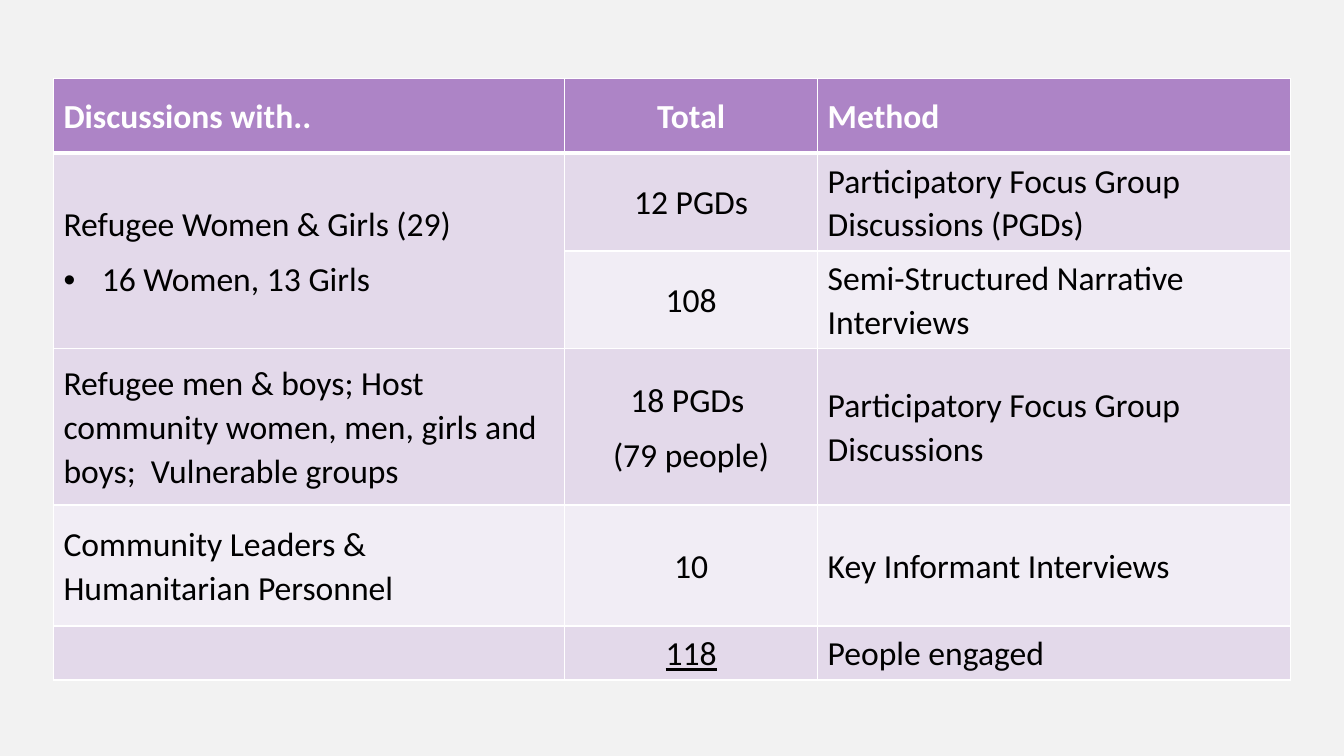
from lxml.etree import SubElement
from pptx import Presentation
from pptx.dml.color import RGBColor
from pptx.enum.text import MSO_ANCHOR, PP_ALIGN
from pptx.oxml.ns import qn
from pptx.util import Inches, Pt

LEFT, TOP = 0.53, 0.78
COLS = [5.07, 2.51, 4.69]
ROWS = [0.74, 0.85, 0.89, 1.55, 1.2, 0.51]
HEADER, DARK, LIGHT = "AD84C6", "E3D9EA", "F1EDF5"
ROW_FILLS = [HEADER, DARK, LIGHT, DARK, LIGHT, DARK]
CONTENT = [
    ["Discussions with..", "Total", "Method"],
    ["Refugee Women & Girls (29)\n16 Women, 13 Girls", "12 PGDs",
     "Participatory Focus Group Discussions (PGDs)"],
    ["", "108", "Semi-Structured Narrative Interviews"],
    ["Refugee men & boys; Host community women, men, girls and boys;  Vulnerable groups",
     "18 PGDs \n(79 people)", "Participatory Focus Group Discussions"],
    ["Community Leaders & Humanitarian Personnel", "10", "Key Informant Interviews"],
    ["", "118", "People engaged"],
]


def color(hex_code):
    """Turn a hex string into a colour."""
    return RGBColor.from_string(hex_code)


def set_borders(cell, top, bottom):
    """Draw white borders with the given top and bottom widths in points."""
    tcPr = cell._tc.get_or_add_tcPr()
    for side, width in (("L", 1), ("R", 1), ("T", top), ("B", bottom)):
        ln = SubElement(tcPr, qn(f"a:ln{side}"), w=str(Pt(width)))
        SubElement(SubElement(ln, qn("a:solidFill")), qn("a:srgbClr"), val="FFFFFF")


def add_bullet(p):
    """Give a paragraph a round bullet with a hanging indent."""
    pPr = p._p.get_or_add_pPr()
    pPr.set("marL", str(Inches(0.38)))
    pPr.set("indent", str(Inches(-0.38)))
    SubElement(pPr, qn("a:buFont"), typeface="Arial")
    SubElement(pPr, qn("a:buChar"), char="•")


def format_paragraph(p, align, text_color, bold):
    """Set the spacing, alignment and font of a table paragraph."""
    p.alignment = align
    p.line_spacing = 1.07
    p.space_after = Pt(8)
    for r in p.runs:
        r.font.name = "Calibri"
        r.font.size = Pt(24)
        r.font.bold = bold
        r.font.color.rgb = color(text_color)


def fill_cell(cell, text, row, col):
    """Fill one cell with its text, background and borders."""
    is_header = row == 0
    set_borders(cell, 3 if row == 1 else 1, 3 if is_header else 1)
    cell.fill.solid()
    cell.fill.fore_color.rgb = color(ROW_FILLS[row])
    cell.vertical_anchor = MSO_ANCHOR.MIDDLE
    if not text:
        return
    side_align = PP_ALIGN.JUSTIFY if is_header else PP_ALIGN.LEFT
    align = PP_ALIGN.CENTER if col == 1 else side_align
    cell.text_frame.text = text
    for p in cell.text_frame.paragraphs:
        format_paragraph(p, align, "FFFFFF" if is_header else "000000", is_header)


def add_discussion_table(s):
    """Add the table of discussions, totals and methods."""
    table = s.shapes.add_table(
        len(ROWS), len(COLS), Inches(LEFT), Inches(TOP),
        Inches(sum(COLS)), Inches(sum(ROWS))).table
    table.first_row = table.horz_banding = False
    for column, width in zip(table.columns, COLS):
        column.width = Inches(width)
    for row, height in zip(table.rows, ROWS):
        row.height = Inches(height)
    for row, texts in enumerate(CONTENT):
        for col, text in enumerate(texts):
            fill_cell(table.cell(row, col), text, row, col)
    table.cell(1, 0).merge(table.cell(2, 0))
    add_bullet(table.cell(1, 0).text_frame.paragraphs[1])
    grand_total = table.cell(len(ROWS) - 1, 1).text_frame.paragraphs[0]
    grand_total.runs[0].font.underline = True


def main():
    """Build and save the slide."""
    prs = Presentation()
    prs.slide_width, prs.slide_height = Inches(13.33), Inches(7.5)
    s = prs.slides.add_slide(prs.slide_layouts[6])
    s.background.fill.solid()
    s.background.fill.fore_color.rgb = color("F2F2F2")
    add_discussion_table(s)
    prs.save("out.pptx")


if __name__ == "__main__":
    main()
